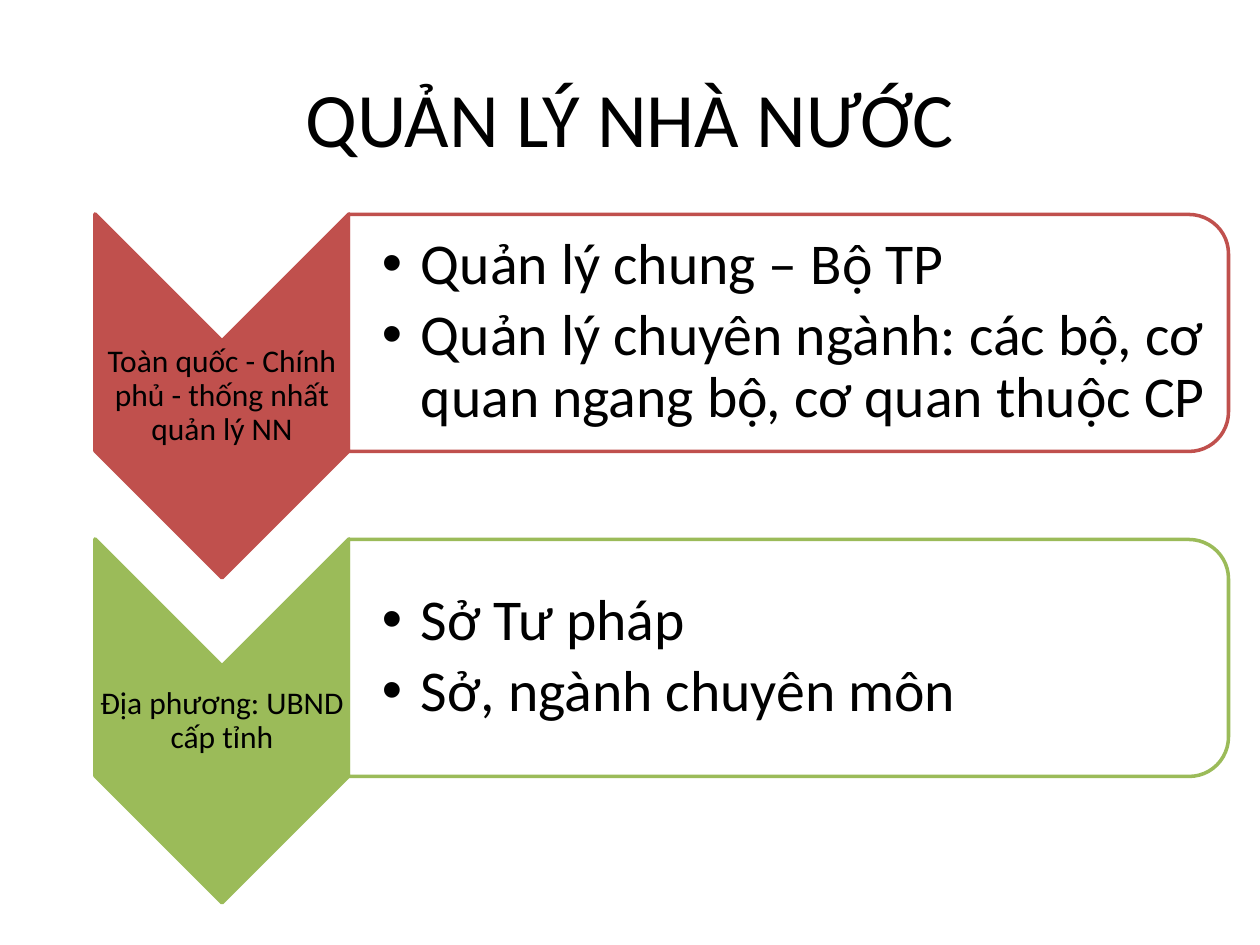
from dataclasses import dataclass

from lxml.etree import SubElement
from pptx import Presentation
from pptx.dml.color import RGBColor
from pptx.enum.shapes import MSO_SHAPE as Shape
from pptx.enum.text import MSO_ANCHOR as Anchor, PP_ALIGN as Align
from pptx.oxml.ns import qn
from pptx.util import Emu, Pt


@dataclass(frozen=True)
class Theme:
    font: str = "Calibri"
    text: str = "000000"
    panel: str = "FFFFFF"
    national: str = "C0504D"
    local: str = "9BBB59"
    title_size: int = 44
    level_size: int = 18
    duty_size: int = 33


theme = Theme()


def px(*lengths):
    return [Emu(round(length * 914400 / 126)) for length in lengths]


def add_text(paragraph, text, size):
    run = paragraph.add_run()
    run.text = text
    run.font.name = theme.font
    run.font.size = Pt(size)
    run.font.color.rgb = RGBColor.from_string(theme.text)


presentation = Presentation()
presentation.slide_width, presentation.slide_height = px(1260, 945)
slide = presentation.slides.add_slide(presentation.slide_layouts[5])

title = slide.shapes.title
title.left, title.top, title.width, title.height = px(63, 38, 1134, 158)
title.text_frame.vertical_anchor = Anchor.MIDDLE
title_paragraph = title.text_frame.paragraphs[0]
title_paragraph.alignment = Align.CENTER
add_text(title_paragraph, "QUẢN LÝ NHÀ NƯỚC", theme.title_size)

levels = [
    (theme.national, "Toàn quốc - Chính phủ - thống nhất quản lý NN",
     ["Quản lý chung – Bộ TP",
      "Quản lý chuyên ngành: các bộ, cơ quan ngang bộ, cơ quan thuộc CP"]),
    (theme.local, "Địa phương: UBND cấp tỉnh",
     ["Sở Tư pháp", "Sở, ngành chuyên môn"]),
]
row_step = 325

for row, (color, level, duties) in enumerate(levels):
    offset = row * row_step
    outlines = [
        (Shape.CHEVRON, color, (40, 269 + offset, 364, 254)),
        (Shape.ROUND_2_SAME_RECTANGLE, theme.panel, (670, offset - 107, 237, 880)),
    ]
    for preset, fill, box in outlines:
        shape = slide.shapes.add_shape(preset, *px(*box))
        shape.rotation = 90
        shape.shadow.inherit = False
        shape.fill.solid()
        shape.fill.fore_color.rgb = RGBColor.from_string(fill)
        shape.line.color.rgb = RGBColor.from_string(color)
        shape.line.width = Pt(2)
        if fill == theme.panel:
            fill_color = shape.fill._xPr.find(qn("a:solidFill"))[0]
            SubElement(fill_color, qn("a:alpha"), val="90000")

    labels = [
        ((95, 341 + offset, 254, 110), (1, 1, 1, 1), [level], theme.level_size, 6),
        ((349, 226 + offset, 868, 213), (33, 3, 3, 3), duties, theme.duty_size, 5),
    ]
    for box, insets, lines, size, gap in labels:
        frame = slide.shapes.add_textbox(*px(*box)).text_frame
        frame.word_wrap = True
        frame.vertical_anchor = Anchor.MIDDLE
        (frame.margin_left, frame.margin_top,
         frame.margin_right, frame.margin_bottom) = px(*insets)
        for index, line in enumerate(lines):
            paragraph = frame.add_paragraph() if index else frame.paragraphs[0]
            paragraph.line_spacing = 0.9
            paragraph.space_after = Pt(gap)
            if lines is duties:
                paragraph.level = 1
                properties = paragraph._p.get_or_add_pPr()
                indent = px(39)[0]
                properties.set("marL", str(int(indent)))
                properties.set("indent", str(-int(indent)))
                SubElement(properties, qn("a:buFont"), typeface="Arial")
                SubElement(properties, qn("a:buChar"), char="•")
            else:
                paragraph.alignment = Align.CENTER
            add_text(paragraph, line, size)

presentation.save("out.pptx")
